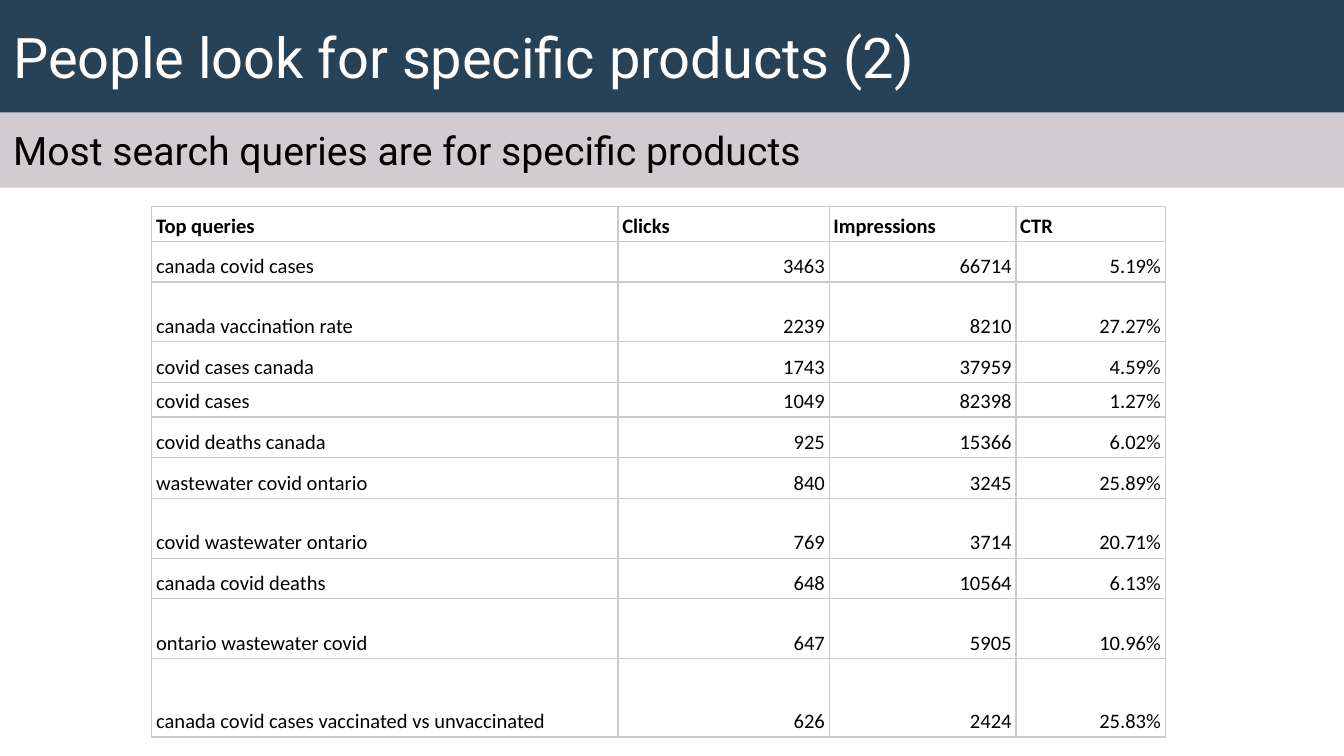
import pptx
import pptx.util
import pptx.dml.color
import pptx.enum.shapes
import pptx.enum.text
import pptx.oxml
import pptx.oxml.ns

Cm = pptx.util.Cm
Pt = pptx.util.Pt
RGBColor = pptx.dml.color.RGBColor
Anchor = pptx.enum.text.MSO_ANCHOR
Align = pptx.enum.text.PP_ALIGN

NAVY = RGBColor(0x27, 0x41, 0x56)
GREY = RGBColor(0xD0, 0xCC, 0xD0)
RULE = RGBColor(0xCC, 0xCC, 0xCC)
WHITE = RGBColor(0xFF, 0xFF, 0xFF)
BLACK = RGBColor(0, 0, 0)

WIDTH = 25.4
COLS = [8.81, 3.99, 3.53, 2.82]
ROWS = [
    (0.64, "Top queries", "Clicks", "Impressions", "CTR"),
    (0.77, "canada covid cases", "3463", "66714", "5.19%"),
    (1.13, "canada vaccination rate", "2239", "8210", "27.27%"),
    (0.77, "covid cases canada", "1743", "37959", "4.59%"),
    (0.64, "covid cases", "1049", "82398", "1.27%"),
    (0.77, "covid deaths canada", "925", "15366", "6.02%"),
    (0.77, "wastewater covid ontario", "840", "3245", "25.89%"),
    (1.13, "covid wastewater ontario", "769", "3714", "20.71%"),
    (0.77, "canada covid deaths", "648", "10564", "6.13%"),
    (1.13, "ontario wastewater covid", "647", "5905", "10.96%"),
    (1.48, "canada covid cases vaccinated vs unvaccinated", "626", "2424", "25.83%"),
]


def add_run(para, text, face, size, color, bold=False):
    run = para.add_run()
    run.text = text
    run.font.name = face
    run.font.size = Pt(size)
    run.font.bold = bold
    run.font.color.rgb = color


def add_edges(cell):
    props = cell._tc.get_or_add_tcPr()
    for side in ("lnL", "lnR", "lnT", "lnB"):
        props.append(pptx.oxml.parse_xml(
            f'<a:{side} {pptx.oxml.ns.nsdecls("a")} w="{Pt(0.75)}">'
            f'<a:solidFill><a:srgbClr val="{RULE}"/></a:solidFill></a:{side}>'))


deck = pptx.Presentation()
deck.slide_width = Cm(WIDTH)
deck.slide_height = Cm(14.29)
slide = deck.slides.add_slide(deck.slide_layouts[6])

BANDS = [
    (0, 2.13, NAVY, "People look for specific products (2)", 30, WHITE),
    (2.13, 1.42, GREY, "Most search queries are for specific products", 21, BLACK),
]
for top, high, fill, text, size, color in BANDS:
    band = slide.shapes.add_shape(
        pptx.enum.shapes.MSO_SHAPE.RECTANGLE, Cm(0), Cm(top), Cm(WIDTH), Cm(high))
    band.shadow.inherit = False
    band.fill.solid()
    band.fill.fore_color.rgb = fill
    band.line.fill.background()
    frame = band.text_frame
    frame.word_wrap = True
    frame.vertical_anchor = Anchor.MIDDLE
    frame.margin_left = frame.margin_right = Cm(0.25)
    frame.margin_top = frame.margin_bottom = Cm(0.25)
    para = frame.paragraphs[0]
    para.alignment = Align.LEFT
    add_run(para, text, "Roboto", size, color)

high = sum(row[0] for row in ROWS)
table = slide.shapes.add_table(
    len(ROWS), len(COLS), Cm(2.87), Cm(3.91), Cm(sum(COLS)), Cm(high)).table
table.first_row = False
table.horz_banding = False
for col, wide in zip(table.columns, COLS):
    col.width = Cm(wide)

for r, (high, *texts) in enumerate(ROWS):
    table.rows[r].height = Cm(high)
    for c, text in enumerate(texts):
        cell = table.cell(r, c)
        cell.vertical_anchor = Anchor.BOTTOM
        cell.margin_left = cell.margin_right = Cm(0.08)
        cell.margin_top = cell.margin_bottom = Cm(0.05)
        add_edges(cell)
        cell.fill.background()
        para = cell.text_frame.paragraphs[0]
        para.alignment = Align.RIGHT if r and c else Align.LEFT
        para.line_spacing = 1.15
        add_run(para, text, "Calibri", 11, BLACK, r == 0)

deck.save("out.pptx")
